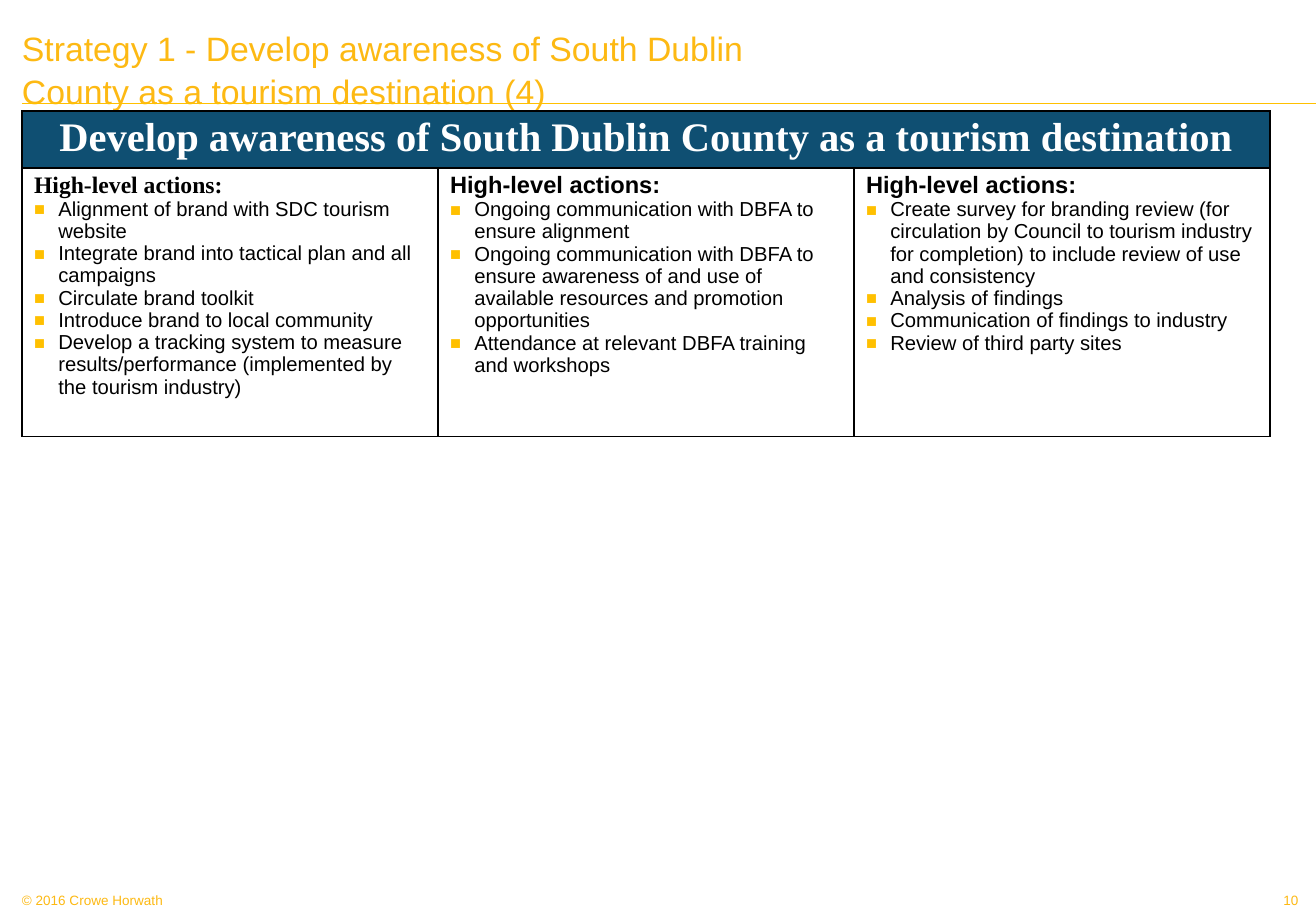
from lxml.etree import SubElement
from pptx import Presentation
from pptx.dml.color import RGBColor
from pptx.enum.shapes import MSO_CONNECTOR
from pptx.enum.text import MSO_ANCHOR, MSO_AUTO_SIZE, PP_ALIGN
from pptx.oxml.ns import qn
from pptx.util import Inches, Pt

SANS, SERIF = "Arial", "Times New Roman"
GOLD, AMBER, NAVY = "FDB913", "FFC000", "0F4F72"
BLACK, WHITE = "000000", "FFFFFF"

TITLE = "Strategy 1 - Develop awareness of South Dublin County as a tourism destination (4)"
BANNER = "Develop awareness of South Dublin County as a tourism destination"
HEADING = "High-level actions:"
ACTIONS = [
    (SERIF, [
        "Alignment of brand with SDC tourism website",
        "Integrate brand into tactical plan and all campaigns",
        "Circulate brand toolkit",
        "Introduce brand to local community",
        "Develop a tracking system to measure results/performance "
        "(implemented by the tourism industry)",
    ]),
    (SANS, [
        "Ongoing communication with DBFA to ensure alignment",
        "Ongoing communication with DBFA to ensure awareness of and use of "
        "available resources and promotion opportunities",
        "Attendance at relevant DBFA training and workshops",
    ]),
    (SANS, [
        "Create survey for branding review (for circulation by Council to tourism "
        "industry for completion) to include review of use and consistency",
        "Analysis of findings",
        "Communication of findings to industry",
        "Review of third party sites",
    ]),
]


def color(value):
    return RGBColor.from_string(value)


class StrategySlide:
    GRID_COLUMNS, GRID_ROWS = 60, 40

    def __init__(self, presentation):
        self.column = presentation.slide_width / self.GRID_COLUMNS
        self.row = presentation.slide_height / self.GRID_ROWS
        self.slide = presentation.slides.add_slide(presentation.slide_layouts[5])

    def across(self, columns):
        return round(columns * self.column)

    def down(self, rows):
        return round(rows * self.row)

    def box(self, left, top, width, height):
        return self.across(left), self.down(top), self.across(width), self.down(height)

    def set_text(self, paragraph, text, size, fill, font=SANS, bold=False,
                 align=PP_ALIGN.LEFT, spacing=1.0):
        paragraph.text = text
        paragraph.alignment = align
        paragraph.line_spacing = spacing
        paragraph.space_before = Pt(0)
        for run in paragraph.runs:
            run.font.name, run.font.size, run.font.bold = font, Pt(size), bold
            run.font.color.rgb = color(fill)

    def frame(self, shape, anchor, margin):
        text_frame = shape.text_frame
        text_frame.word_wrap = True
        text_frame.auto_size = MSO_AUTO_SIZE.NONE
        text_frame.vertical_anchor = anchor
        text_frame.margin_left = text_frame.margin_right = 0
        text_frame.margin_top = text_frame.margin_bottom = Inches(margin)
        return text_frame.paragraphs[0]

    def title(self, text, *place):
        shape = self.slide.shapes.title
        shape.left, shape.top, shape.width, shape.height = self.box(*place)
        self.set_text(self.frame(shape, MSO_ANCHOR.MIDDLE, 0), text, 20, GOLD, spacing=1.05)

    def label(self, text, align, *place):
        shape = self.slide.shapes.add_textbox(*self.box(*place))
        self.set_text(self.frame(shape, MSO_ANCHOR.TOP, 0.02), text, 8, GOLD, align=align)

    def rule(self, left, right, top):
        line = self.slide.shapes.add_connector(
            MSO_CONNECTOR.STRAIGHT, self.across(left), self.down(top),
            self.across(right), self.down(top))
        line.line.color.rgb = color(AMBER)
        line.line.width = Pt(0.75)
        SubElement(line._element.spPr, qn("a:effectLst"))

    def bullet(self, paragraph):
        properties = paragraph._p.get_or_add_pPr()
        properties.set("marL", str(Inches(0.2)))
        properties.set("indent", str(-Inches(0.2)))
        bullet_color = SubElement(properties, qn("a:buClr"))
        SubElement(bullet_color, qn("a:srgbClr"), val=AMBER)
        SubElement(properties, qn("a:buSzPct"), val="90000")
        SubElement(properties, qn("a:buFont"), typeface=SANS)
        SubElement(properties, qn("a:buChar"), char="■")

    def style_cell(self, cell, fill):
        cell.margin_left = cell.margin_right = Inches(0.1)
        cell.margin_top = cell.margin_bottom = Inches(0.04)
        properties = cell._tc.get_or_add_tcPr()
        for side in ("a:lnL", "a:lnR", "a:lnT", "a:lnB"):
            border = SubElement(properties, qn(side), w=str(Pt(1)))
            border_fill = SubElement(border, qn("a:solidFill"))
            SubElement(border_fill, qn("a:srgbClr"), val=BLACK)
        cell.fill.solid()
        cell.fill.fore_color.rgb = color(fill)

    def action_table(self, banner, actions, left, top, width, heights):
        count = len(actions)
        table = self.slide.shapes.add_table(
            2, count, *self.box(left, top, width, sum(heights))).table
        table.first_row = table.horz_banding = False
        for row, height, fill in zip(table.rows, heights, (NAVY, WHITE)):
            row.height = self.down(height)
            for cell in row.cells:
                self.style_cell(cell, fill)
        for column in table.columns:
            column.width = self.across(width / count)
        header = table.cell(0, 0)
        header.merge(table.cell(0, count - 1))
        self.set_text(header.text_frame.paragraphs[0], banner, 24, WHITE, SERIF, True,
                      PP_ALIGN.CENTER, 0.98)
        for index, (heading_font, items) in enumerate(actions):
            text_frame = table.cell(1, index).text_frame
            self.set_text(text_frame.paragraphs[0], HEADING, 14, BLACK, heading_font, True,
                          spacing=0.98)
            for item in items:
                paragraph = text_frame.add_paragraph()
                self.bullet(paragraph)
                self.set_text(paragraph, item, 12, BLACK, spacing=0.98)


def main():
    presentation = Presentation()
    presentation.slide_width, presentation.slide_height = Inches(10.83), Inches(7.5)
    strategy = StrategySlide(presentation)
    strategy.rule(1, 60, 4.53)
    strategy.label("10", PP_ALIGN.RIGHT, 56.7, 39.05, 2.5, 0.9)
    strategy.label("© 2016 Crowe Horwath", PP_ALIGN.LEFT, 1, 39.05, 14.35, 0.9)
    strategy.title(TITLE, 1, 1, 35, 4)
    strategy.action_table(BANNER, ACTIONS, 1, 4.88, 56.9, (2.5, 11.8))
    presentation.save("out.pptx")


if __name__ == "__main__":
    main()
